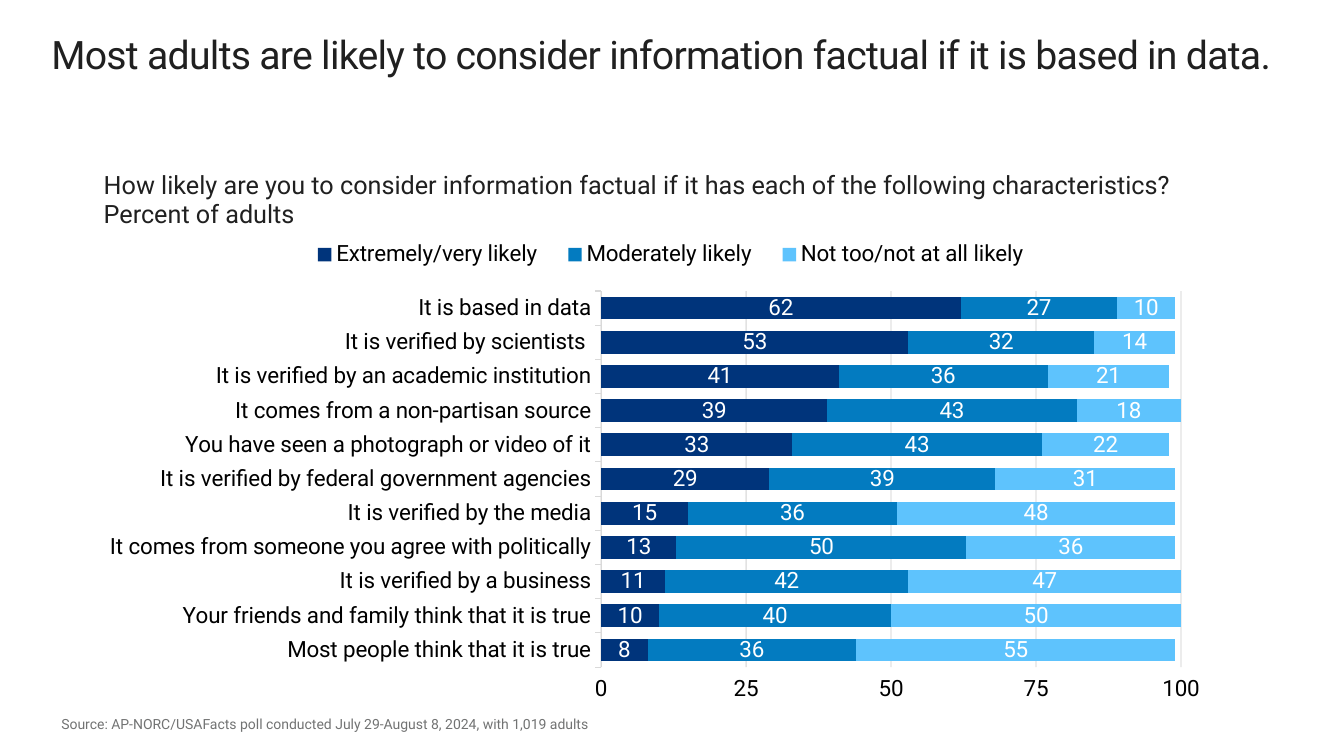
from pptx import Presentation
from pptx.chart.data import CategoryChartData
from pptx.dml.color import RGBColor
from pptx.enum.chart import (XL_CHART_TYPE, XL_LABEL_POSITION, XL_LEGEND_POSITION as LEGEND,
                             XL_TICK_LABEL_POSITION as TICK_LABEL, XL_TICK_MARK as TICK)
from pptx.enum.text import MSO_ANCHOR as ANCHOR
from pptx.oxml import parse_xml
from pptx.oxml.ns import nsdecls, qn
from pptx.util import Inches, Pt

FONT = "Roboto"
LEFT = 0.51
CHART_WIDTH = 11.48

SERIES = [("Extremely/very likely", "00347B"),
          ("Moderately likely", "037BC0"),
          ("Not too/not at all likely", "5EC3FD")]
ANSWERS = [
    ("Most people think that it is true", 8, 36, 55),
    ("Your friends and family think that it is true", 10, 40, 50),
    ("It is verified by a business", 11, 42, 47),
    ("It comes from someone you agree with politically", 13, 50, 36),
    ("It is verified by the media", 15, 36, 48),
    ("It is verified by federal government agencies", 29, 39, 31),
    ("You have seen a photograph or video of it", 33, 43, 22),
    ("It comes from a non-partisan source", 39, 43, 18),
    ("It is verified by an academic institution", 41, 36, 21),
    ("It is verified by scientists ", 53, 32, 14),
    ("It is based in data", 62, 27, 10),
]


def rgb(color):
    return RGBColor.from_string(color)


def set_font(font, size, color):
    font.name, font.size = FONT, Pt(size)
    font.color.rgb = rgb(color)


def add_text(s, box, text, size, color, indent=0.1, spacing=0.95, anchor=ANCHOR.TOP):
    tb = s.shapes.add_textbox(*map(Inches, box))
    tf = tb.text_frame
    tf.word_wrap = True
    tf.vertical_anchor = anchor
    tf.margin_left = Inches(indent)
    tf.margin_top = tf.margin_right = tf.margin_bottom = 0
    p = tf.paragraphs[0]
    p.text = text
    p.line_spacing = spacing
    set_font(p.font, size, color)
    return p


def add_title(s, box, text):
    p = add_text(s, box, text, 28, "202020", indent=0, spacing=0.9)
    for r in p.runs:
        r.font._element.set("spc", "-50")


def set_layout(element, x, y, w, h, inner=False):
    """Place a plot area or legend at shares of the chart's size."""
    for old in element.findall(qn("c:layout")):
        element.remove(old)
    target = '<c:layoutTarget val="inner"/>' if inner else ""
    layout = parse_xml(
        f'<c:layout {nsdecls("c")}><c:manualLayout>{target}'
        '<c:xMode val="edge"/><c:yMode val="edge"/>'
        f'<c:x val="{x}"/><c:y val="{y}"/><c:w val="{w}"/><c:h val="{h}"/>'
        '</c:manualLayout></c:layout>')
    position = element.find(qn("c:legendPos"))
    if position is None:
        element.insert(0, layout)
    else:
        position.addnext(layout)


def style_axes(chart):
    cat = chart.category_axis
    cat.major_tick_mark = TICK.OUTSIDE
    cat.format.line.color.rgb = rgb("D9D9D9")
    cat.format.line.width = Pt(0.75)

    val = chart.value_axis
    val.minimum_scale, val.maximum_scale, val.major_unit = 0, 100, 25
    val.major_tick_mark = TICK.NONE
    val.tick_label_position = TICK_LABEL.LOW
    val.format.line.fill.background()
    grid = val.major_gridlines.format.line
    grid.color.rgb = rgb("C7C7C7")
    grid.width = Pt(1)
    fill = val.major_gridlines._xAx.find(".//" + qn("a:srgbClr"))
    fill.append(parse_xml(f'<a:alpha {nsdecls("a")} val="50000"/>'))

    for axis in (cat, val):
        axis.minor_tick_mark = TICK.NONE
        set_font(axis.tick_labels.font, 16, "000000")


def add_answer_chart(s, box):
    data = CategoryChartData()
    categories, *columns = zip(*ANSWERS)
    data.categories = categories
    for (name, _), values in zip(SERIES, columns):
        data.add_series(name, values)
    chart = s.shapes.add_chart(XL_CHART_TYPE.BAR_STACKED, *map(Inches, box), data).chart
    set_font(chart.font, 16, "000000")
    chart.has_title = False

    chart.has_legend = True
    chart.legend.position = LEGEND.TOP
    chart.legend.include_in_layout = False
    set_font(chart.legend.font, 16, "000000")
    set_layout(chart.legend._element, 0.21, 0.01, 0.65, 0.06)

    plot = chart.plots[0]
    plot.gap_width, plot.overlap = 50, 100
    plot.vary_by_categories = False
    for series, (_, color) in zip(plot.series, SERIES):
        series.format.fill.solid()
        series.format.fill.fore_color.rgb = rgb(color)
        labels = series.data_labels
        labels.show_value = True
        labels.position = XL_LABEL_POSITION.CENTER
        set_font(labels.font, 16, "FFFFFF")

    style_axes(chart)
    set_layout(chart._chartSpace.find(".//" + qn("c:plotArea")),
               0.475, 0.114, 0.501, 0.763, inner=True)


def build_slide(prs):
    s = prs.slides.add_slide(prs.slide_layouts[6])
    add_title(s, (LEFT, 0.35, 12.32, 1.28),
              "Most adults are likely to consider information factual if it is based in data.")
    add_text(s, (0.93, 1.7, CHART_WIDTH, 0.74),
             "How likely are you to consider information factual if it has each of the "
             "following characteristics? \vPercent of adults", 18, "202020")
    add_answer_chart(s, (LEFT, 2.33, CHART_WIDTH, 4.89))
    add_text(s, (LEFT, 7.07, 7.5, 0.23),
             "Source: AP-NORC/USAFacts poll conducted July 29-August 8, 2024, with 1,019 adults",
             10, "727373", anchor=ANCHOR.MIDDLE)


def main():
    prs = Presentation()
    prs.slide_width, prs.slide_height = Inches(13.33), Inches(7.5)
    build_slide(prs)
    prs.save("out.pptx")


if __name__ == "__main__":
    main()
